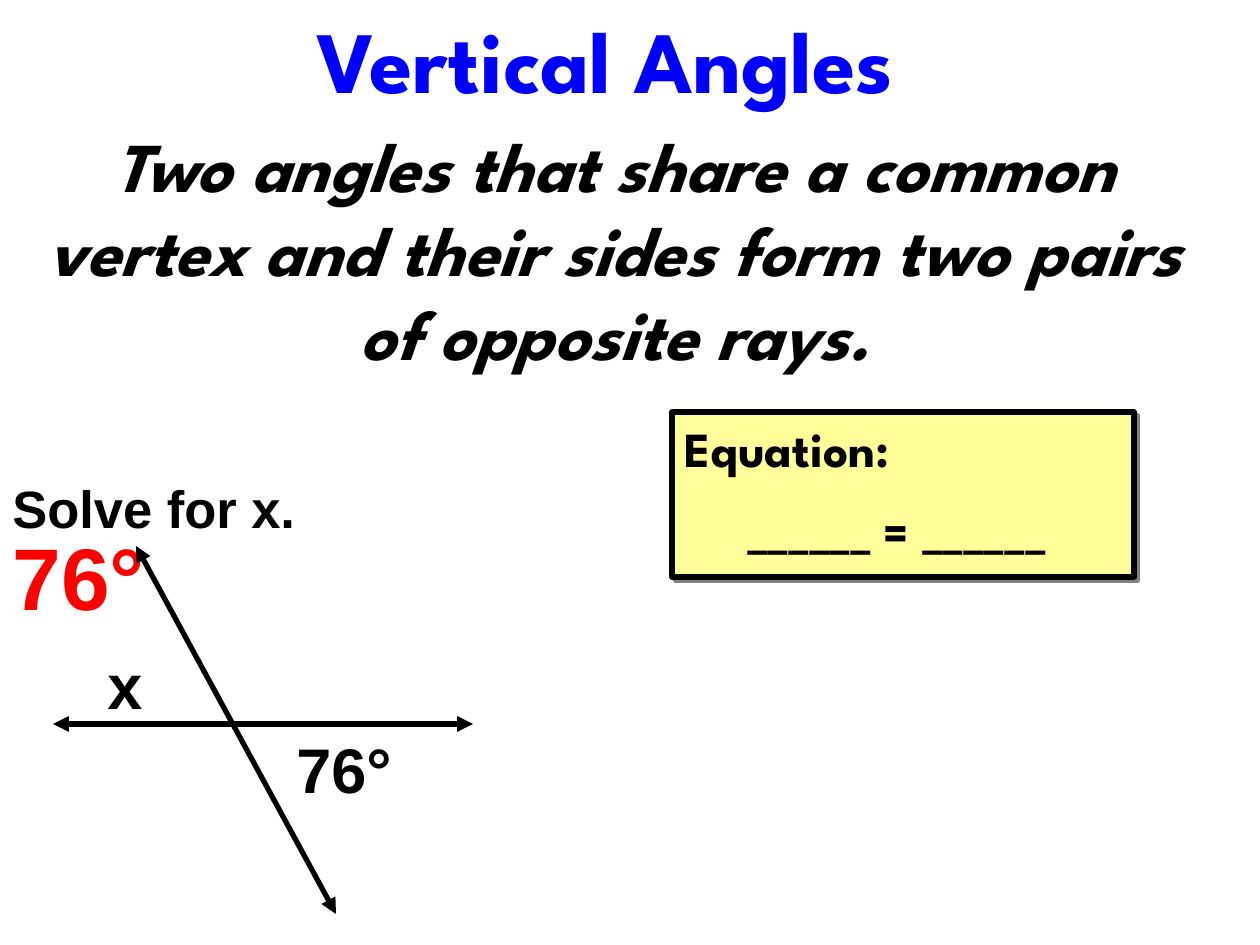
from dataclasses import dataclass

import lxml.etree
import pptx
import pptx.dml.color
import pptx.enum.shapes
import pptx.enum.text
import pptx.oxml.ns
import pptx.util

ALIGN = pptx.enum.text.PP_ALIGN
SCALE = 914400 / 126


@dataclass(frozen=True)
class Theme:
    display: str = "League Spartan"
    plain: str = "Arial"
    ink: str = "000000"
    title: str = "0000FF"
    answer: str = "FF0000"
    panel: str = "FFFF99"
    shadow: str = "808080"
    huge: int = 50
    large: int = 40
    label: int = 36
    prompt: int = 30
    equation: int = 28
    stroke: int = 3


THEME = Theme()


def px(n):
    return pptx.util.Emu(round(n * SCALE))


def rgb(value):
    return pptx.dml.color.RGBColor.from_string(value)


def child(parent, tag, **attrs):
    return lxml.etree.SubElement(parent, pptx.oxml.ns.qn(tag), attrs)


def set_up_frame(tf):
    tf.word_wrap = True
    tf.auto_size = pptx.enum.text.MSO_AUTO_SIZE.NONE
    tf.vertical_anchor = pptx.enum.text.MSO_ANCHOR.TOP


def add_run(p, text, size, font=THEME.plain, color=THEME.ink, italic=False, align=ALIGN.LEFT):
    p.alignment = align
    r = p.add_run()
    r.text = text
    r.font.name = font
    r.font.size = pptx.util.Pt(size)
    r.font.bold = True
    r.font.italic = italic
    r.font.color.rgb = rgb(color)


def set_title(s, text, x, y, w, h, right_inset):
    sp = s.shapes.title
    sp.left, sp.top, sp.width, sp.height = map(px, (x, y, w, h))
    tf = sp.text_frame
    set_up_frame(tf)
    tf.margin_right = px(right_inset)
    add_run(tf.paragraphs[0], text, THEME.huge, THEME.display, THEME.title, align=ALIGN.CENTER)


def add_text(s, text, x, y, w, h, size, **style):
    tf = s.shapes.add_textbox(px(x), px(y), px(w), px(h)).text_frame
    set_up_frame(tf)
    add_run(tf.paragraphs[0], text, size, **style)


def add_double_arrow(s, x1, y1, x2, y2):
    line = s.shapes.add_connector(
        pptx.enum.shapes.MSO_CONNECTOR.STRAIGHT, px(x1), px(y1), px(x2), px(y2))
    line.line.color.rgb = rgb(THEME.ink)
    line.line.width = pptx.util.Pt(THEME.stroke)
    ln = line.line._get_or_add_ln()
    for end in ("a:headEnd", "a:tailEnd"):
        child(ln, end, type="triangle")
    child(line._element.spPr, "a:effectLst")


def add_equation_panel(s, x, y, w, h):
    sp = s.shapes.add_shape(
        pptx.enum.shapes.MSO_SHAPE.RECTANGLE, px(x), px(y), px(w), px(h))
    sp.fill.solid()
    sp.fill.fore_color.rgb = rgb(THEME.panel)
    sp.line.color.rgb = rgb(THEME.ink)
    sp.line.width = pptx.util.Pt(THEME.stroke)
    sp.shadow.inherit = False
    effects = sp._element.spPr.find(pptx.oxml.ns.qn("a:effectLst"))
    shadow = child(effects, "a:outerShdw", dist=str(pptx.util.Pt(2.8)),
                   dir="2700000", algn="ctr", rotWithShape="0")
    child(shadow, "a:srgbClr", val=THEME.shadow)
    tf = sp.text_frame
    set_up_frame(tf)
    add_run(tf.paragraphs[0], "Equation:", THEME.equation, THEME.display)
    p = tf.add_paragraph()
    p.space_before = pptx.util.Pt(THEME.equation / 2)
    add_run(p, "______ = ______ ", THEME.equation, THEME.display, align=ALIGN.CENTER)


def main():
    prs = pptx.Presentation()
    prs.slide_width, prs.slide_height = px(1260), px(945)
    s = prs.slides.add_slide(prs.slide_layouts[5])

    set_title(s, "Vertical Angles", 0, 0, 1260, 117, right_inset=62)
    add_text(s, "76°", 0, 517, 315, 117, THEME.huge, color=THEME.answer)
    add_text(s, "Two angles that share a common vertex and their sides form "
                "two pairs of opposite rays.", 21, 116, 1187, 273, THEME.large,
             font=THEME.display, italic=True, align=ALIGN.CENTER)

    add_double_arrow(s, 136, 546, 336, 914)
    add_double_arrow(s, 53, 724, 473, 724)
    add_text(s, "76°", 284, 724, 166, 88, THEME.label)
    add_text(s, "x", 95, 640, 166, 88, THEME.label)
    add_text(s, "Solve for x.", 0, 470, 433, 76, THEME.prompt)
    add_equation_panel(s, 672, 412, 462, 165)

    prs.save("out.pptx")


if __name__ == "__main__":
    main()
